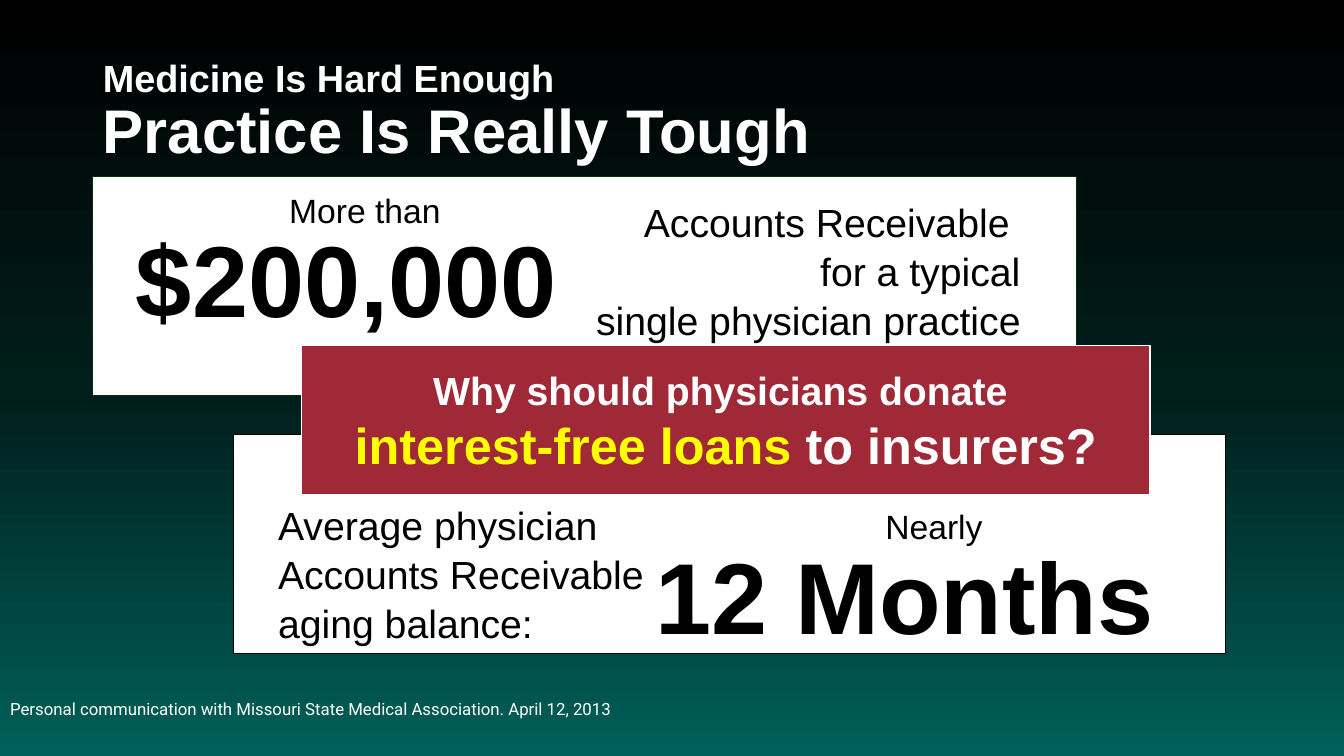
from copy import deepcopy
from dataclasses import dataclass

from lxml import etree
from pptx import Presentation
from pptx.dml.color import RGBColor
from pptx.enum.shapes import MSO_SHAPE
from pptx.enum.text import MSO_ANCHOR, MSO_AUTO_SIZE, PP_ALIGN
from pptx.oxml.ns import qn
from pptx.util import Inches, Pt

RECT = MSO_SHAPE.RECTANGLE
MIDDLE, TOP = MSO_ANCHOR.MIDDLE, MSO_ANCHOR.TOP
LEFT, CENTER, RIGHT = PP_ALIGN.LEFT, PP_ALIGN.CENTER, PP_ALIGN.RIGHT
NO_FIT = MSO_AUTO_SIZE.NONE


@dataclass(frozen=True)
class Theme:
    font: str = "Arial"
    note_font: str = "Roboto"
    white: str = "FFFFFF"
    black: str = "000000"
    green: str = "003300"
    red: str = "9F2936"
    yellow: str = "FFFF00"
    gradient: tuple = ((0, "000000"), (0.52, "001E1C"), (1, "006059"))
    note: int = 12
    lead: int = 24
    kicker: int = 27
    body: int = 28
    accent: int = 36
    title: int = 44
    figure: int = 72


def rgb(color):
    return RGBColor.from_string(color)


def add_run(p, text, size, color, bold=False, font=Theme.font):
    r = p.add_run()
    r.text = text
    r.font.size, r.font.bold, r.font.name = Pt(size), bold, font
    r.font.color.rgb = rgb(color)


class SlideBuilder:
    """Builds one slide; every box is (left, top, width, height) in percent of the slide."""

    def __init__(self, prs, theme):
        self.theme = theme
        self.size = prs.slide_width, prs.slide_height
        self.slide = prs.slides.add_slide(prs.slide_layouts[1])

    def place(self, box):
        return [round(share / 100 * self.size[i % 2]) for i, share in enumerate(box)]

    def background(self):
        fill = self.slide.background.fill
        fill.gradient()
        fill.gradient_angle = 270
        stops = self.slide.background._cSld.find(".//" + qn("a:gsLst"))
        stops.append(deepcopy(stops[-1]))
        for stop, (position, color) in zip(fill.gradient_stops, self.theme.gradient):
            stop.position = position
            stop.color.rgb = rgb(color)

    def add_lines(self, sp, lines, align=LEFT, anchor=TOP, spacing=1.0):
        """Fills a shape with paragraphs and returns them; each line is a list of run arguments."""
        tf = sp.text_frame
        tf.word_wrap, tf.auto_size, tf.vertical_anchor = True, NO_FIT, anchor
        for i, runs in enumerate(lines):
            p = tf.add_paragraph() if i else tf.paragraphs[0]
            p.alignment, p.line_spacing = align, spacing
            for run in runs:
                add_run(p, **run)
        return tf.paragraphs

    def placeholder(self, index, box):
        sp = self.slide.placeholders[index]
        sp.left, sp.top, sp.width, sp.height = self.place(box)
        return sp

    def title(self, kicker, text, box):
        t = self.theme
        first = dict(text=kicker, size=t.kicker, color=t.white, bold=True)
        p = self.add_lines(self.placeholder(0, box), [[first]], anchor=MIDDLE, spacing=0.9)[0]
        p.add_line_break()
        add_run(p, text, t.title, t.white, bold=True)

    def source(self, text, box):
        t = self.theme
        run = dict(text=text, size=t.note, color=t.white, font=t.note_font)
        p = self.add_lines(self.placeholder(1, box), [[run]], anchor=MIDDLE, spacing=0.9)[0]
        p.space_before = Pt(0)
        pPr = p._p.get_or_add_pPr()
        pPr.set("marL", "0")
        pPr.set("indent", "0")
        etree.SubElement(pPr, qn("a:buNone"))

    def panel(self, shapes, box, fill, line, width):
        sp = shapes.add_shape(RECT, *self.place(box))
        sp.shadow.inherit = False
        sp.fill.solid()
        sp.fill.fore_color.rgb = rgb(fill)
        sp.line.color.rgb = rgb(line)
        sp.line.width = Pt(width)
        return sp

    def fact(self, box, line, figure, description):
        """Adds a white card with a large figure beside its description."""
        t = self.theme
        shapes = self.slide.shapes.add_group_shape().shapes
        self.panel(shapes, box, t.white, line, 0.5)

        lead, value, figure_box = figure
        sp = shapes.add_textbox(*self.place(figure_box))
        runs = [[dict(text=lead, size=t.lead, color=t.black)],
                [dict(text=value, size=t.figure, color=t.black, bold=True)]]
        self.add_lines(sp, runs, spacing=0.9)[0].alignment = CENTER

        lines, align, text_box = description
        sp = shapes.add_textbox(*self.place(text_box))
        runs = [[dict(text=text, size=t.body, color=t.black)] for text in lines]
        self.add_lines(sp, runs, align, spacing=1.04)

    def banner(self, question, highlight, ending, box):
        t = self.theme
        sp = self.panel(self.slide.shapes, box, t.red, t.white, 1)
        runs = [[dict(text=question, size=t.body, color=t.white, bold=True)],
                [dict(text=highlight, size=t.accent, color=t.yellow, bold=True),
                 dict(text=ending, size=t.accent, color=t.white, bold=True)]]
        self.add_lines(sp, runs, CENTER, MIDDLE)


def main():
    prs = Presentation()
    prs.slide_width, prs.slide_height = Inches(13.33), Inches(7.5)
    theme = Theme()
    s = SlideBuilder(prs, theme)
    s.background()
    s.title("Medicine Is Hard Enough", "Practice Is Really Tough", (6.9, 5.33, 86.25, 19.33))
    s.source("Personal communication with Missouri State Medical Association. April 12, 2013",
             (0, 87.73, 67.5, 12.27))
    s.fact((6.9, 23.33, 73.2, 28.93), theme.green,
           ("More than ", "$200,000", (9.38, 25.07, 36.23, 20.8)),
           (("Accounts Receivable ", "for a typical", "single physician practice"),
            RIGHT, (39.98, 25.33, 36.68, 20.13)))
    s.fact((17.4, 57.47, 73.8, 28.93), theme.black,
           ("Nearly", "12 Months", (48, 66.93, 42.98, 20.8)),
           (("Average physician", "Accounts Receivable", "aging balance:"),
            LEFT, (19.95, 65.47, 32.1, 20.13)))
    s.banner("Why should physicians donate ", "interest-free loans ", "to insurers?",
             (22.43, 45.73, 63.15, 19.73))
    prs.save("out.pptx")


if __name__ == "__main__":
    main()
